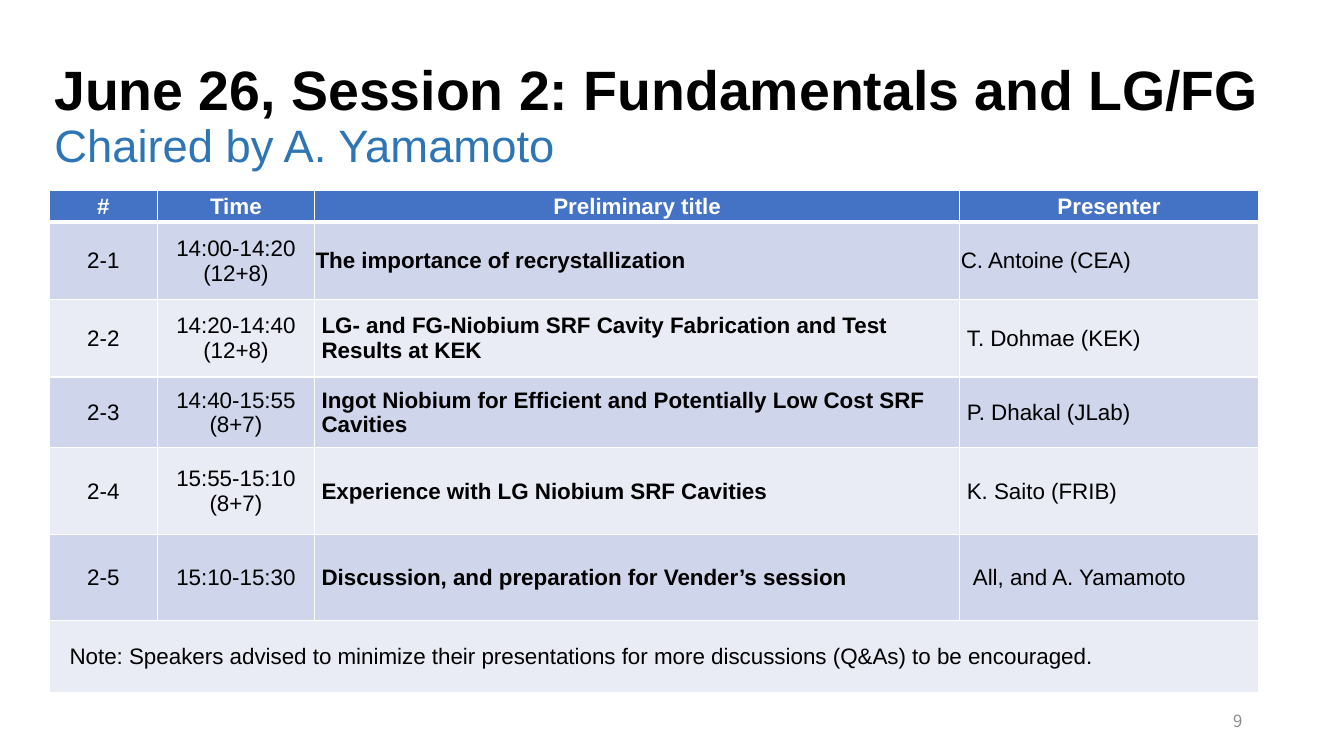
from lxml import etree
from pptx import Presentation
from pptx.dml.color import RGBColor
from pptx.enum.text import MSO_ANCHOR as Anchor, PP_ALIGN as Align
from pptx.oxml.ns import qn
from pptx.util import Pt

PX = 9144  # 100 px to the inch
BLACK = RGBColor(0x00, 0x00, 0x00)
WHITE = RGBColor(0xFF, 0xFF, 0xFF)
CHAIR_BLUE = RGBColor(0x2E, 0x75, 0xB6)
HEADER_BLUE = RGBColor(0x44, 0x72, 0xC4)
BAND_DARK = RGBColor(0xCF, 0xD5, 0xEA)
BAND_LIGHT = RGBColor(0xE9, 0xEB, 0xF5)
NUMBER_GRAY = RGBColor(0x8C, 0x8C, 0x8C)

COLUMN_WIDTHS = [107, 156, 640, 296]
ROW_HEIGHTS = [31, 77, 77, 70, 86, 86, 71]
HEADINGS = ["#", "Time", "Preliminary title", "Presenter"]
# Time, title, presenter, then the left margins of title and presenter
TALKS = [
    ("14:00-14:20\n(12+8)", "The importance of recrystallization",
     "C. Antoine (CEA)", 1, 1),
    ("14:20-14:40\n(12+8)",
     "LG- and FG-Niobium SRF Cavity Fabrication and Test\nResults at KEK",
     "T. Dohmae (KEK)", 7, 7),
    ("14:40-15:55\n(8+7)",
     "Ingot Niobium for Efficient and Potentially Low Cost SRF\nCavities",
     "P. Dhakal (JLab)", 7, 7),
    ("15:55-15:10\n(8+7)", "Experience with LG Niobium SRF Cavities",
     "K. Saito (FRIB)", 7, 7),
    ("15:10-15:30", "Discussion, and preparation for Vender’s session",
     "All, and A. Yamamoto", 7, 13),
]
NOTE = ("Note: Speakers advised to minimize their presentations "
        "for more discussions (Q&As) to be encouraged.")


def set_font(font, size, color, bold=False, name="Arial"):
    font.name, font.size, font.bold = name, Pt(size), bold
    font.color.rgb = color


def add_text_frame(slide, box):
    frame = slide.shapes.add_textbox(*(length * PX for length in box)).text_frame
    frame.word_wrap = True
    frame.vertical_anchor = Anchor.MIDDLE
    return frame


def add_title(slide, box, title, chair):
    paragraph = add_text_frame(slide, box).paragraphs[0]
    paragraph.line_spacing = 0.9
    run = paragraph.add_run()
    run.text = title
    set_font(run.font, 39.6, BLACK, bold=True)
    paragraph.add_line_break()
    run = paragraph.add_run()
    run.text = chair
    set_font(run.font, 32.4, CHAIR_BLUE)


def add_page_number(slide, box, number):
    paragraph = add_text_frame(slide, box).paragraphs[0]
    paragraph.text = number
    paragraph.alignment = Align.RIGHT
    set_font(paragraph.font, 12, NUMBER_GRAY, name="Noto Sans CJK JP")


def set_borders(cell, top, bottom):
    """Draw white borders; top and bottom are widths in points."""
    properties = cell._tc.get_or_add_tcPr()
    for side, width in (("L", 1), ("R", 1), ("T", top), ("B", bottom)):
        line = etree.SubElement(properties, qn(f"a:ln{side}"), w=str(Pt(width)))
        fill = etree.SubElement(line, qn("a:solidFill"))
        etree.SubElement(fill, qn("a:srgbClr"), val=str(WHITE))


def fill_cell(cell, text, row, align=Align.LEFT, bold=False, margin=1):
    header = row == 0
    set_borders(cell, top=3 if row == 1 else 1, bottom=3 if header else 1)
    cell.fill.solid()
    cell.fill.fore_color.rgb = (
        HEADER_BLUE if header else BAND_DARK if row % 2 else BAND_LIGHT)
    cell.vertical_anchor = Anchor.MIDDLE
    cell.margin_left = margin * PX
    cell.margin_right = cell.margin_top = PX
    cell.margin_bottom = 0
    cell.text_frame.text = text
    for paragraph in cell.text_frame.paragraphs:
        paragraph.alignment = align
        set_font(paragraph.font, 16, WHITE if header else BLACK, bold)


def add_schedule(slide, left, top):
    table = slide.shapes.add_table(
        len(ROW_HEIGHTS), len(COLUMN_WIDTHS), left * PX, top * PX,
        sum(COLUMN_WIDTHS) * PX, sum(ROW_HEIGHTS) * PX).table
    for column, width in zip(table.columns, COLUMN_WIDTHS):
        column.width = width * PX
    for row, height in zip(table.rows, ROW_HEIGHTS):
        row.height = height * PX

    for column, heading in enumerate(HEADINGS):
        fill_cell(table.cell(0, column), heading, 0, Align.CENTER, bold=True)
    for row, talk in enumerate(TALKS, start=1):
        time, title, presenter, title_margin, presenter_margin = talk
        fill_cell(table.cell(row, 0), f"2-{row}", row, Align.CENTER)
        fill_cell(table.cell(row, 1), time, row, Align.CENTER)
        fill_cell(table.cell(row, 2), title, row, bold=True, margin=title_margin)
        fill_cell(table.cell(row, 3), presenter, row, margin=presenter_margin)

    last = len(ROW_HEIGHTS) - 1
    note_cell = table.cell(last, 0)
    note_cell.merge(table.cell(last, len(COLUMN_WIDTHS) - 1))
    fill_cell(note_cell, NOTE, last, margin=20)


def main():
    presentation = Presentation()
    presentation.slide_width = 1333 * PX
    presentation.slide_height = 750 * PX
    slide = presentation.slides.add_slide(presentation.slide_layouts[6])
    add_title(slide, (44, 53, 1252, 127),
              "June 26, Session 2: Fundamentals and LG/FG",
              "Chaired by A. Yamamoto")
    add_schedule(slide, 49, 189)
    add_page_number(slide, (942, 695, 300, 40), "9")
    presentation.save("out.pptx")


if __name__ == "__main__":
    main()
